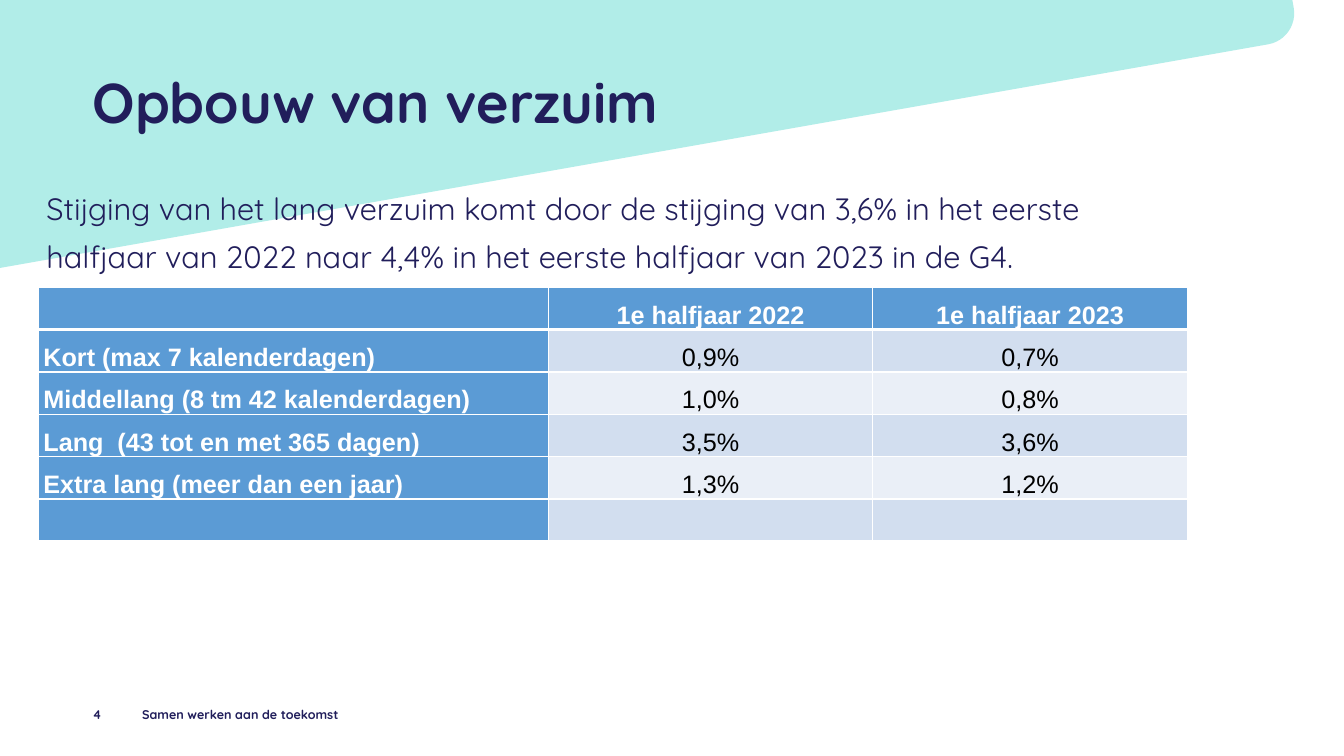
from lxml import etree
from pptx import Presentation
from pptx import util as u
from pptx.dml.color import RGBColor
from pptx.enum import shapes, text
from pptx.oxml import ns

COLORS = {
    "navy": "211E5B", "mint": "B1EDE8", "white": "FFFFFF", "black": "000000",
    "blue": "5B9BD5", "band": "D2DEEF", "pale": "EAEFF7",
}
ABSENCE = [
    ("", "1e halfjaar 2022", "1e halfjaar 2023"),
    ("Kort (max 7 kalenderdagen)", "0,9%", "0,7%"),
    ("Middellang (8 tm 42 kalenderdagen)", "1,0%", "0,8%"),
    ("Lang  (43 tot en met 365 dagen)", "3,5%", "3,6%"),
    ("Extra lang (meer dan een jaar)", "1,3%", "1,2%"),
    ("", "", ""),
]


class AbsenceSlide:
    """Holds the style and the current slide, with one method per element."""

    def __init__(self, deck):
        self.slide = deck.slides.add_slide(deck.slide_layouts[1])
        self.heading_font = "Quicksand"
        self.table_font = "Arial"

    def color(self, name):
        return RGBColor.from_string(COLORS[name])

    def paint(self, fill, name):
        fill.solid()
        fill.fore_color.rgb = self.color(name)

    def add_words(self, paragraph, words, size, font, color, bold):
        run = paragraph.add_run()
        run.text = words
        run.font.size = u.Pt(size)
        run.font.name = font
        run.font.bold = bold
        run.font.color.rgb = self.color(color)

    def fill_frame(self, holder, box, words, size, bold):
        holder.left, holder.top, holder.width, holder.height = map(u.Pt, box)
        frame = holder.text_frame
        frame.word_wrap = True
        frame.auto_size = text.MSO_AUTO_SIZE.NONE
        frame.vertical_anchor = text.MSO_ANCHOR.TOP
        frame.margin_left = frame.margin_right = u.Pt(0)
        frame.margin_top = frame.margin_bottom = u.Pt(0)
        paragraph = frame.paragraphs[0]
        paragraph.alignment = text.PP_ALIGN.LEFT
        self.add_words(paragraph, words, size, self.heading_font, "navy", bold)
        return paragraph

    def band(self, box, angle, corner):
        band = self.slide.shapes.add_shape(
            shapes.MSO_SHAPE.ROUNDED_RECTANGLE, *map(u.Pt, box))
        band.adjustments[0] = corner
        band.rotation = angle
        band.shadow.inherit = False
        band.line.fill.background()
        self.paint(band.fill, "mint")
        self.slide.shapes._spTree.insert(2, band._element)

    def title(self, box, words):
        self.fill_frame(self.slide.shapes.title, box, words, 40, True)

    def body(self, box, words):
        paragraph = self.fill_frame(self.slide.placeholders[1], box, words, 22, False)
        properties = paragraph._p.get_or_add_pPr()
        properties.set("marL", "0")
        properties.set("indent", "0")
        etree.SubElement(properties, ns.qn("a:buNone"))
        paragraph.line_spacing = 1.3
        paragraph.space_before = u.Pt(0)
        paragraph.space_after = u.Pt(10)

    def label(self, box, words):
        self.fill_frame(self.slide.shapes.add_textbox(0, 0, 0, 0), box, words, 9, True)

    def borders(self, cell, top, bottom):
        properties = cell._tc.get_or_add_tcPr()
        for side, width in (("L", 1), ("R", 1), ("T", top), ("B", bottom)):
            line = etree.SubElement(properties, ns.qn(f"a:ln{side}"), w=str(u.Pt(width)))
            solid = etree.SubElement(line, ns.qn("a:solidFill"))
            etree.SubElement(solid, ns.qn("a:srgbClr"), val=COLORS["white"])

    def cell(self, cell, row, column, words):
        heading = row == 0 or column == 0
        self.borders(cell, 3 if row == 1 else 1, 3 if row == 0 else 1)
        self.paint(cell.fill, "blue" if heading else "band" if row % 2 else "pale")
        if not words:
            return
        cell.vertical_anchor = text.MSO_ANCHOR.BOTTOM
        cell.margin_left = cell.margin_right = u.Pt(3.6)
        cell.margin_top = cell.margin_bottom = u.Pt(0)
        paragraph = cell.text_frame.paragraphs[0]
        paragraph.line_spacing = 1.5
        paragraph.alignment = text.PP_ALIGN.CENTER if column else text.PP_ALIGN.LEFT
        self.add_words(paragraph, words, 18, self.table_font,
                       "white" if heading else "black", heading)

    def table(self, left, top, widths, row_height, rows):
        table = self.slide.shapes.add_table(
            len(rows), len(widths), u.Pt(left), u.Pt(top),
            u.Pt(sum(widths)), u.Pt(row_height * len(rows))).table
        for column, width in zip(table.columns, widths):
            column.width = u.Pt(width)
        for r, values in enumerate(rows):
            table.rows[r].height = u.Pt(row_height)
            for c, words in enumerate(values):
                self.cell(table.cell(r, c), r, c, words)


def main():
    deck = Presentation()
    deck.slide_width, deck.slide_height = u.Pt(960), u.Pt(540)
    page = AbsenceSlide(deck)
    page.band((-54, -78.5, 972.7, 192.2), 350, 0.117)
    page.title((66.2, 48.2, 810, 95), "Opbouw van verzuim")
    page.body((33.1, 127.4, 810, 342.7),
              "Stijging van het lang verzuim komt door de stijging van 3,6% in het eerste "
              "halfjaar van 2022 naar 4,4% in het eerste halfjaar van 2023 in de G4.")
    page.table(27.4, 205.2, (364.3, 231.8, 224.6), 29.9, ABSENCE)
    page.label((66.2, 504.7, 34.6, 28.8), "4")
    page.label((101.5, 504.7, 257.8, 28.8), "Samen werken aan de toekomst")
    deck.save("out.pptx")


if __name__ == "__main__":
    main()
